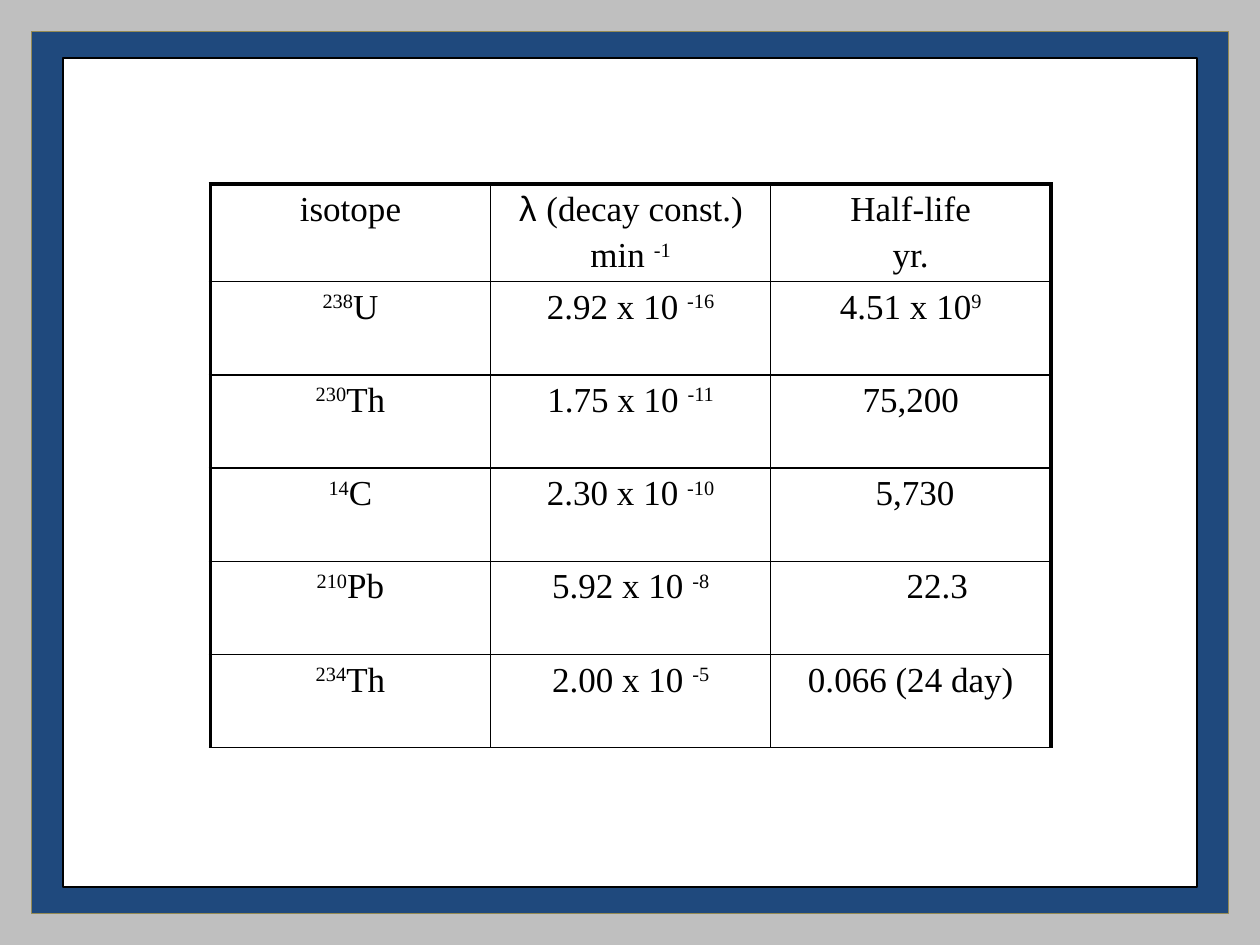
from lxml import etree
from pptx import Presentation
from pptx.dml.color import RGBColor
from pptx.enum import shapes, text
from pptx.oxml.ns import qn
from pptx.util import Inches, Pt

BLACK = "000000"
SERIF = "Times New Roman"
TABLE_WIDTH, ROW_HEIGHT = 6.67, 0.74
THIN, THICK = 1, 2.25

# Text between carets is superscript; each string in a cell is a paragraph.
ROWS = [
    (["isotope"], [" λ (decay const.) ", "min ^-1^"], ["Half-life", "yr."]),
    (["^238^U"], ["2.92 x 10 ^-16^"], ["4.51 x 10^9^"]),
    (["^230^Th"], ["1.75 x 10 ^-11^"], ["75,200"]),
    (["^14^C"], ["2.30 x 10 ^-10^"], [" 5,730"]),
    (["^210^Pb"], ["5.92 x 10 ^-8^"], ["22.3"]),
    (["^234^Th"], ["2.00 x 10 ^-5^"], ["0.066 (24 day)"]),
]
INDENTS = {"22.3": 0.42}


def color(value):
    return RGBColor.from_string(value)


def add_panel(slide, left, top, width, height, fill, line):
    panel = slide.shapes.add_shape(
        shapes.MSO_SHAPE.RECTANGLE,
        Inches(left), Inches(top), Inches(width), Inches(height))
    panel.shadow.inherit = False
    panel.fill.solid()
    panel.fill.fore_color.rgb = color(fill)
    panel.line.color.rgb = color(line)
    panel.line.width = Pt(0.75)


def add_run(paragraph, content, font_name=SERIF, superscript=False):
    run = paragraph.add_run()
    run.text = content
    run.font.name = font_name
    run.font.size = Pt(20)
    run.font.color.rgb = color(BLACK)
    if superscript:
        run.font._element.set("baseline", "30000")


def write_paragraph(paragraph, content):
    paragraph.alignment = text.PP_ALIGN.CENTER
    paragraph.space_before = Pt(4)
    symbol = " λ "
    if content.startswith(symbol):
        add_run(paragraph, symbol, "Arial")
        content = content.removeprefix(symbol)
    for index, part in enumerate(content.split("^")):
        if part:
            add_run(paragraph, part, superscript=index % 2 == 1)


def set_borders(cell, widths):
    """Draw the left, right, top and bottom borders, widths in points."""
    properties = cell._tc.get_or_add_tcPr()
    for index, (side, width) in enumerate(zip("LRTB", widths)):
        line = etree.Element(qn(f"a:ln{side}"), w=str(Pt(width)))
        fill = etree.SubElement(line, qn("a:solidFill"))
        etree.SubElement(fill, qn("a:srgbClr"), val=BLACK)
        properties.insert(index, line)


def fill_cell(cell, paragraphs):
    cell.fill.background()
    cell.margin_left = Inches(0.1 + INDENTS.get(paragraphs[0], 0))
    frame = cell.text_frame
    for index, content in enumerate(paragraphs):
        paragraph = frame.add_paragraph() if index else frame.paragraphs[0]
        write_paragraph(paragraph, content)


def add_isotope_table(slide):
    column_count = len(ROWS[0])
    table = slide.shapes.add_table(
        len(ROWS), column_count, Inches(1.67), Inches(1.46),
        Inches(TABLE_WIDTH), Inches(ROW_HEIGHT * len(ROWS))).table
    table.first_row = table.horz_banding = False
    for column in table.columns:
        column.width = Inches(TABLE_WIDTH / column_count)
    for row_index, row in enumerate(ROWS):
        table.rows[row_index].height = Inches(ROW_HEIGHT)
        for column_index, paragraphs in enumerate(row):
            cell = table.cell(row_index, column_index)
            fill_cell(cell, paragraphs)
            set_borders(cell, (
                THICK if column_index == 0 else THIN,
                THICK if column_index == column_count - 1 else THIN,
                THICK if row_index == 0 else THIN,
                THIN))


def main():
    presentation = Presentation()
    presentation.slide_width = Inches(10)
    presentation.slide_height = Inches(7.5)
    slide = presentation.slides.add_slide(presentation.slide_layouts[6])
    slide.background.fill.solid()
    slide.background.fill.fore_color.rgb = color("BFBFBF")
    add_panel(slide, 0.25, 0.25, 9.5, 7, "1F497D", "948A54")
    add_panel(slide, 0.5, 0.46, 9, 6.58, "FFFFFF", BLACK)
    add_isotope_table(slide)
    presentation.save("out.pptx")


if __name__ == "__main__":
    main()
